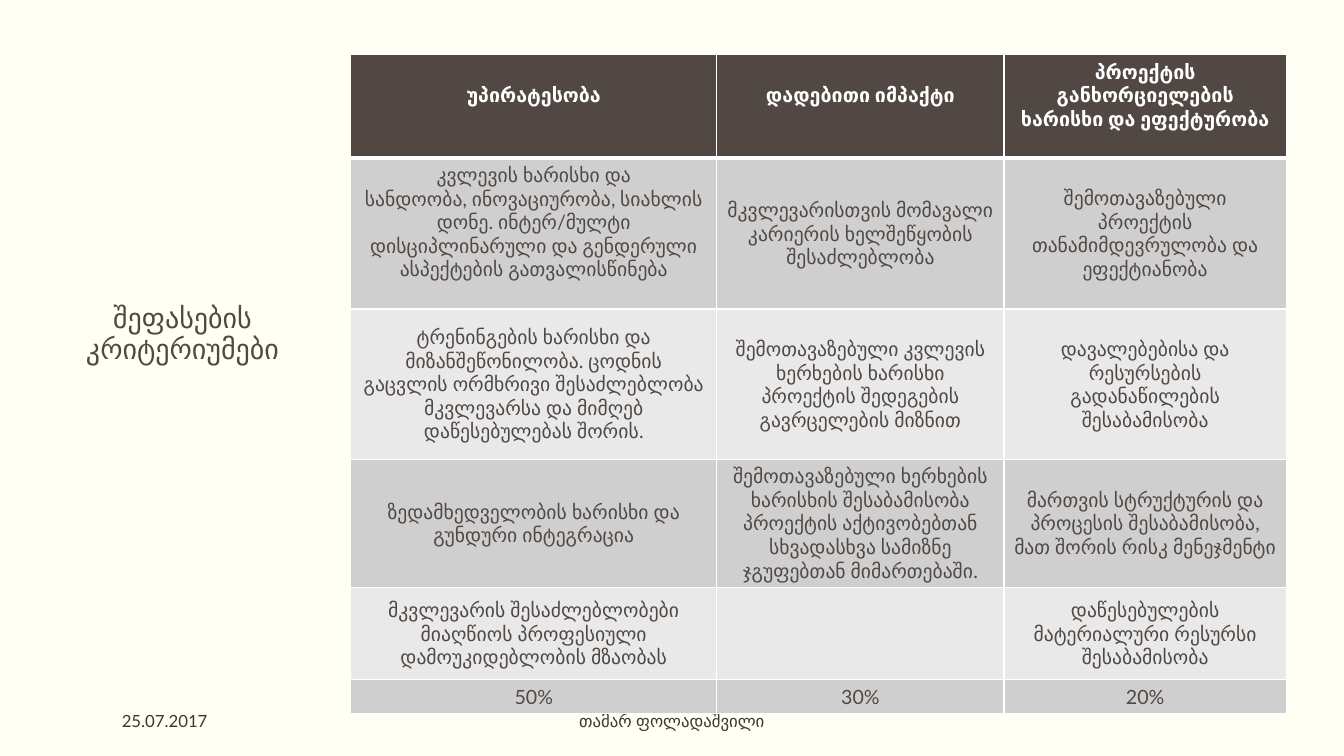
"""Build the evaluation criteria slide with its weighted criteria table."""
from lxml import etree
from pptx import Presentation
from pptx.dml.color import RGBColor
from pptx.enum.text import MSO_ANCHOR, PP_ALIGN
from pptx.oxml.ns import qn
from pptx.util import Pt

MIDDLE = MSO_ANCHOR.MIDDLE
LEFT, CENTER = PP_ALIGN.LEFT, PP_ALIGN.CENTER
COLORS = {"bg": "FFFFF3", "brown": "514843", "footer": "3D3632",
          "white": "FFFFFF", "dark_band": "D0CFCF", "light_band": "E9E9E9"}


def add_run(p, text, size, font, color, bold=False):
    r = p.add_run()
    r.text = text
    r.font.size = Pt(size)
    r.font.name = font
    r.font.bold = bold
    r.font.color.rgb = RGBColor.from_string(COLORS[color])


def add_border(cell, side, width):
    ln = etree.SubElement(cell._tc.get_or_add_tcPr(), qn(f"a:ln{side}"), w=str(Pt(width)))
    fill = etree.SubElement(ln, qn("a:solidFill"))
    etree.SubElement(fill, qn("a:srgbClr"), val=COLORS["white"])


prs = Presentation()
prs.slide_width, prs.slide_height = Pt(960), Pt(540)
s = prs.slides.add_slide(prs.slide_layouts[5])
s.background.fill.solid()
s.background.fill.fore_color.rgb = RGBColor.from_string(COLORS["bg"])

title = s.shapes.title
title.left, title.top, title.width, title.height = Pt(41.8), Pt(213), Pt(177), Pt(52.6)
tf = title.text_frame
tf.word_wrap = True
tf.vertical_anchor = MIDDLE
p = tf.paragraphs[0]
p.alignment = CENTER
p.line_spacing = 0.9
add_run(p, "შეფასების კრიტერიუმები", 20, "Arial", "brown")

footers = [("25.07.2017", 87, 144, LEFT), ("თამარ ფოლადაშვილი", 231, 498, CENTER)]
for text, left, width, align in footers:
    tf = s.shapes.add_textbox(Pt(left), Pt(500.4), Pt(width), Pt(28.8)).text_frame
    tf.word_wrap = True
    tf.vertical_anchor = MIDDLE
    tf.margin_left = tf.margin_right = 0
    p = tf.paragraphs[0]
    p.alignment = align
    add_run(p, text, 12, "Lato", "footer")

criteria = [
    ["უპირატესობა", "დადებითი იმპაქტი", "პროექტის განხორციელების ხარისხი და ეფექტურობა"],
    ["კვლევის ხარისხი და\nსანდოობა, ინოვაციურობა, სიახლის დონე. ინტერ/მულტი "
     "დისციპლინარული და გენდერული ასპექტების გათვალისწინება",
     "მკვლევარისთვის მომავალი კარიერის ხელშეწყობის შესაძლებლობა",
     "შემოთავაზებული პროექტის თანამიმდევრულობა და ეფექტიანობა"],
    ["ტრენინგების ხარისხი და\nმიზანშეწონილობა. ცოდნის გაცვლის ორმხრივი შესაძლებლობა "
     "მკვლევარსა და მიმღებ დაწესებულებას შორის.",
     "შემოთავაზებული კვლევის ხერხების ხარისხი პროექტის შედეგების გავრცელების მიზნით",
     "დავალებებისა და რესურსების გადანაწილების შესაბამისობა"],
    ["ზედამხედველობის ხარისხი და გუნდური ინტეგრაცია",
     "შემოთავაზებული ხერხების ხარისხის შესაბამისობა პროექტის აქტივობებთან "
     "სხვადასხვა სამიზნე ჯგუფებთან მიმართებაში.",
     "მართვის სტრუქტურის და პროცესის შესაბამისობა, მათ შორის რისკ მენეჯმენტი"],
    ["მკვლევარის შესაძლებლობები მიაღწიოს პროფესიული დამოუკიდებლობის მზაობას",
     "", "დაწესებულების მატერიალური რესურსი შესაბამისობა"],
    ["50%", "30%", "20%"],
]
col_widths = [261.4, 205.2, 201.6]
row_heights = [74, 107.5, 107.5, 90.5, 66, 23]
tall_bottom = {(0, 0), (0, 1), (0, 2), (1, 0)}

table = s.shapes.add_table(len(criteria), len(col_widths), Pt(250.6), Pt(39),
                           Pt(sum(col_widths)), Pt(sum(row_heights))).table
for col, width in zip(table.columns, col_widths):
    col.width = Pt(width)
for row, height in zip(table.rows, row_heights):
    row.height = Pt(height)

for i, texts in enumerate(criteria):
    header = i == 0
    band = "brown" if header else "dark_band" if i % 2 else "light_band"
    for j, text in enumerate(texts):
        cell = table.cell(i, j)
        cell.vertical_anchor = MIDDLE
        cell.margin_bottom = Pt(20 if (i, j) in tall_bottom else 3.6)
        for side in "LRTB":
            thick = (header and side == "B") or (i == 1 and side == "T")
            add_border(cell, side, 3 if thick else 1)
        cell.fill.solid()
        cell.fill.fore_color.rgb = RGBColor.from_string(COLORS[band])
        tf = cell.text_frame
        for k, line in enumerate(text.split("\n") if text else []):
            p = tf.add_paragraph() if k else tf.paragraphs[0]
            p.alignment = CENTER
            add_run(p, line, 14, "Lato", "white" if header else "brown", header)

prs.save("out.pptx")
